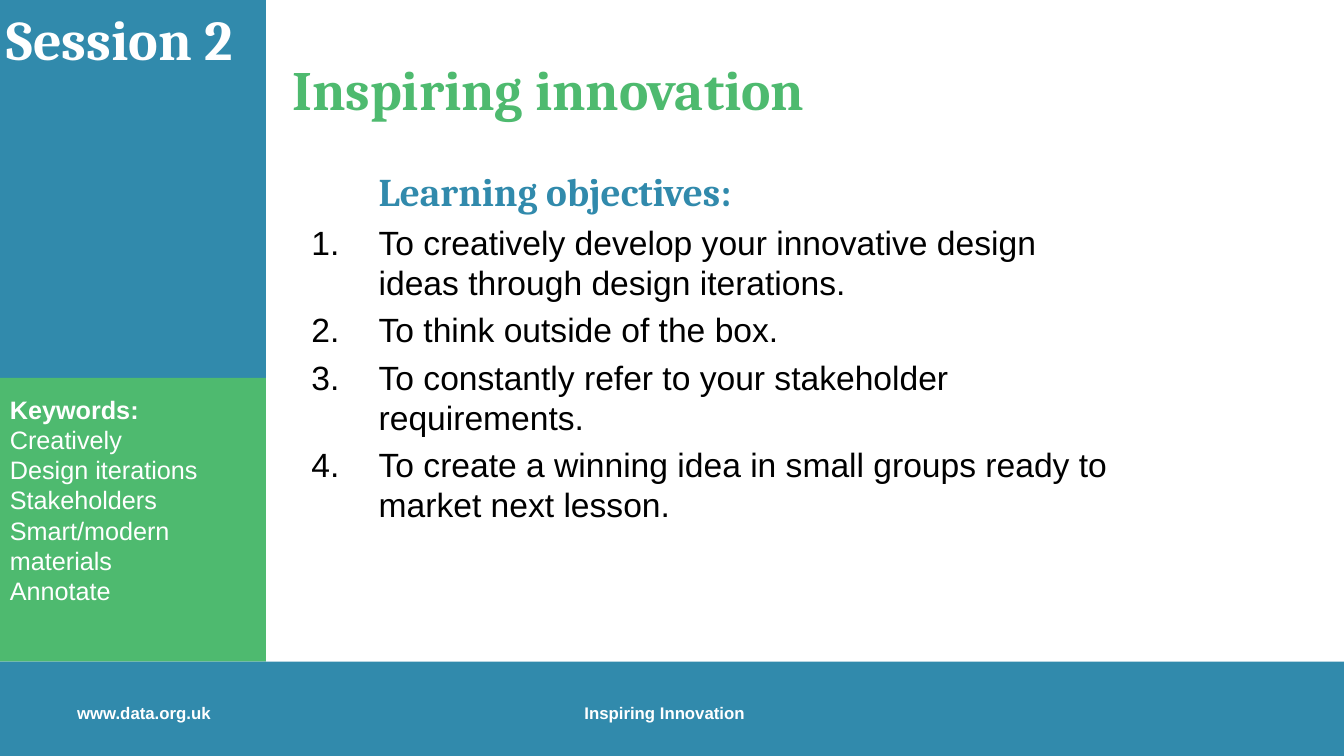
from lxml import etree
from pptx import Presentation
from pptx.dml.color import RGBColor
from pptx.enum.shapes import MSO_SHAPE
from pptx.enum.text import MSO_ANCHOR, MSO_AUTO_SIZE, PP_ALIGN
from pptx.oxml.ns import qn
from pptx.util import Pt

RECT = MSO_SHAPE.RECTANGLE
TOP = MSO_ANCHOR.TOP
LEFT = PP_ALIGN.LEFT
FIXED = MSO_AUTO_SIZE.NONE

HUES = {"blue": "318AAC", "green": "4EBA6F", "white": "FFFFFF", "black": "000000"}
HEAD, TEXT = "Cambria", "Arial"

WIDE, HIGH = 960, 540
SIDE_W, FOOT_Y, KEY_Y = 190, 472.5, 270

GOALS = [
    "To creatively develop your innovative design ideas through design iterations.",
    "To think outside of the box.",
    "To constantly refer to your stakeholder requirements.",
    "To create a winning idea in small groups ready to market next lesson.",
]
WORDS = ["Creatively", "Design iterations", "Stakeholders", "Smart/modern",
         "materials", "Annotate"]


def tint(hue):
    return RGBColor.from_string(HUES[hue])


def panel(slide, x, y, w, h, hue):
    shape = slide.shapes.add_shape(RECT, Pt(x), Pt(y), Pt(w), Pt(h))
    shape.shadow.inherit = False
    shape.fill.solid()
    shape.fill.fore_color.rgb = tint(hue)
    shape.line.fill.background()
    return shape


def frame(shape, left=7.2, top=3.6):
    """Set up the text frame: fixed size, wrapped, read from the top."""
    text = shape.text_frame
    text.auto_size = FIXED
    text.word_wrap = True
    text.vertical_anchor = TOP
    text.margin_left, text.margin_top = Pt(left), Pt(top)
    return text


def write(text, lines):
    """Fill a frame with (words, size, font, hue, bold) lines."""
    paras = []
    for i, (words, size, face, hue, bold) in enumerate(lines):
        para = text.add_paragraph() if i else text.paragraphs[0]
        para.alignment = LEFT
        run = para.add_run()
        run.text = words
        font = run.font
        font.size, font.name, font.bold = Pt(size), face, bold
        font.color.rgb = tint(hue)
        paras.append(para)
    return paras


def label(slide, x, y, w, h, line, left=7.2):
    box = slide.shapes.add_textbox(Pt(x), Pt(y), Pt(w), Pt(h))
    write(frame(box, left), [line])


def place(shape, x, y, w, h):
    shape.left, shape.top, shape.width, shape.height = Pt(x), Pt(y), Pt(w), Pt(h)


def footer(slide, x, y, w, h):
    panel(slide, x, y, w, h, "blue")
    for dx, words in ((48, "www.data.org.uk"), (410.4, "Inspiring Innovation")):
        label(slide, x + dx, y + 25.75, 163.5, 25, (words, 12, TEXT, "white", True))


def sidebar(slide, x, y, w, h):
    panel(slide, x, y, w, h, "blue")
    label(slide, x, y, w, 55.5, ("Session 2", 40, HEAD, "white", True), 4.5)
    keys = panel(slide, x, KEY_Y, w, y + h - KEY_Y, "green")
    lines = [("Keywords:", 18, TEXT, "white", True)]
    lines += [(word, 18, TEXT, "white", False) for word in WORDS]
    write(frame(keys, top=11.5), lines)


def lesson(slide, x, y, w, h):
    title = slide.shapes.title
    place(title, x, y, 450.7, 54)
    write(frame(title), [("Inspiring innovation", 39.6, HEAD, "green", True)])

    body = slide.placeholders[1]
    place(body, x + 13.7, y + 80, w - 13.7, h - 80)
    lines = [("Learning objectives:", 28, HEAD, "blue", True)]
    lines += [(goal, 24, TEXT, "black", False) for goal in GOALS]
    for i, para in enumerate(write(frame(body), lines)):
        para.space_before = Pt(5 if i else 0)
        props = para._p.get_or_add_pPr()
        props.set("marL", str(Pt(48)))
        props.set("indent", str(Pt(-48 if i else 0)))
        if i:
            etree.SubElement(props, qn("a:buFont"), typeface=TEXT)
            etree.SubElement(props, qn("a:buAutoNum"), type="arabicPeriod")
        else:
            etree.SubElement(props, qn("a:buNone"))


def main():
    deck = Presentation()
    deck.slide_width, deck.slide_height = Pt(WIDE), Pt(HIGH)
    slide = deck.slides.add_slide(deck.slide_layouts[1])
    footer(slide, 0, FOOT_Y, WIDE, HIGH - FOOT_Y)
    sidebar(slide, 0, 0, SIDE_W, FOOT_Y)
    lesson(slide, 201.6, 36, 600.5, FOOT_Y - 36)
    deck.save("out.pptx")


if __name__ == "__main__":
    main()
